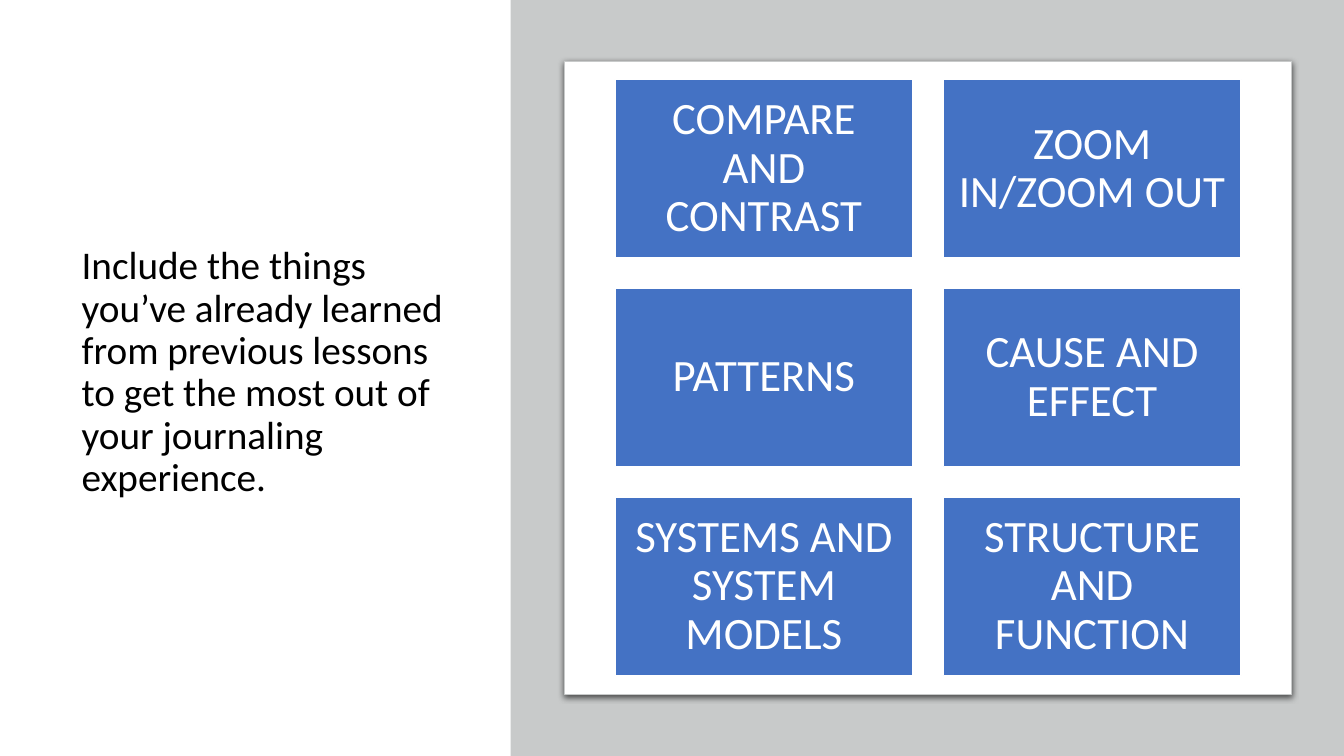
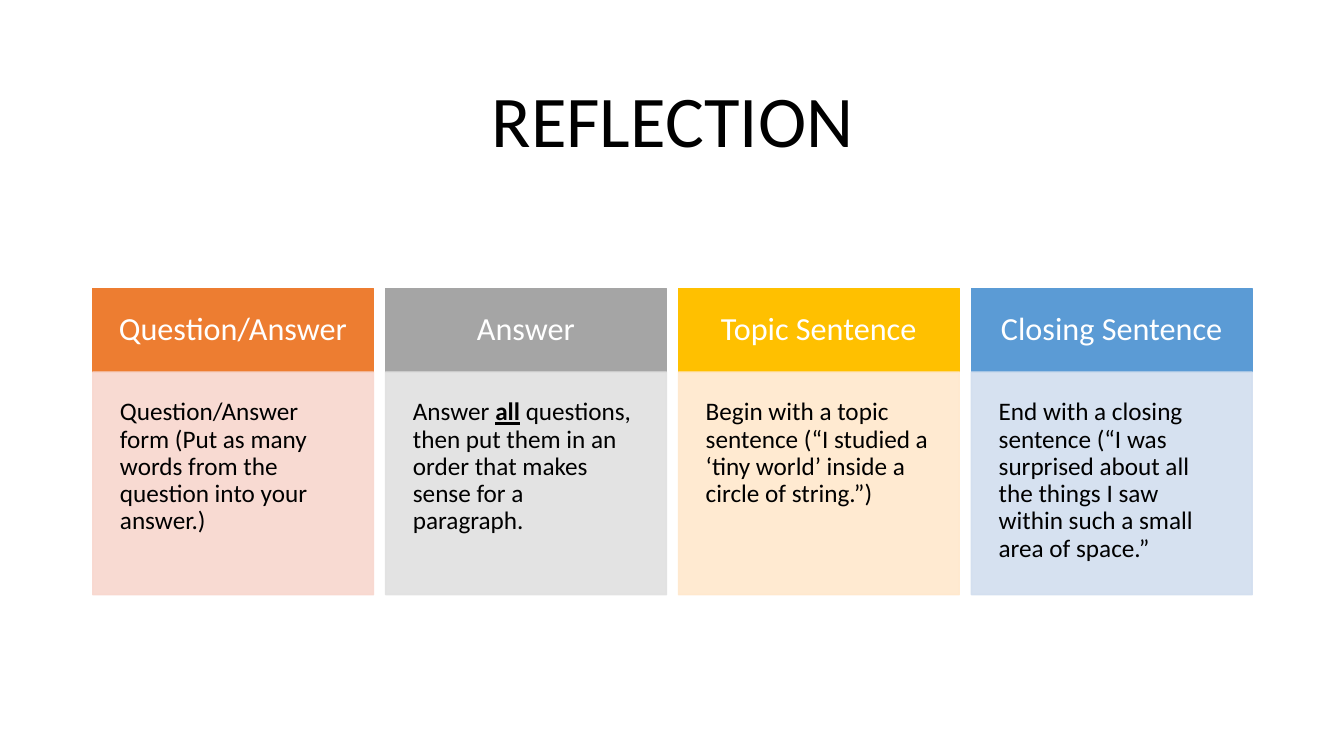
from dataclasses import dataclass
from typing import NamedTuple

from lxml.etree import SubElement
from pptx import Presentation
from pptx.dml.color import RGBColor as RGB
from pptx.enum.shapes import MSO_SHAPE as Kind
from pptx.enum.text import MSO_ANCHOR as Anchor, MSO_AUTO_SIZE as Fit, PP_ALIGN as Align
from pptx.oxml.ns import qn
from pptx.util import Inches, Pt

FONT = "Calibri"
WHITE, BLACK, GREY, BLUE = "FFFFFF", "000000", "C8CACA", "4472C4"
WIDE, HIGH = 13.33, 7.5


class Box(NamedTuple):
    left: float
    top: float
    wide: float
    high: float


@dataclass(frozen=True)
class Grid:
    area: Box
    cols: int
    rows: int
    gap: float

    def cell(self, col: int, row: int) -> Box:
        wide = (self.area.wide - self.gap * (self.cols - 1)) / self.cols
        high = (self.area.high - self.gap * (self.rows - 1)) / self.rows
        return Box(self.area.left + col * (wide + self.gap),
                   self.area.top + row * (high + self.gap), wide, high)


@dataclass(frozen=True)
class Style:
    size: float
    tint: str
    align: Align
    anchor: Anchor
    side: float = 0.1
    edge: float = 0.05


@dataclass(frozen=True)
class Card:
    head: str
    body: str
    dark: str
    pale: str


TILE = Style(32, WHITE, Align.CENTER, Anchor.MIDDLE, 0.13, 0.13)
HEAD = Style(23, WHITE, Align.CENTER, Anchor.MIDDLE, 0.22, 0.22)
BODY = Style(18, BLACK, Align.LEFT, Anchor.TOP, 0.27, 0.27)
LEAD = Style(28, BLACK, Align.LEFT, Anchor.MIDDLE)
TITLE = Style(52, BLACK, Align.CENTER, Anchor.MIDDLE)

TILES = [
    "COMPARE AND CONTRAST", "ZOOM IN/ZOOM OUT",
    "PATTERNS", "CAUSE AND EFFECT",
    "SYSTEMS AND SYSTEM MODELS", "STRUCTURE AND FUNCTION",
]
CARDS = [
    Card("Question/Answer",
         "Question/Answer form (Put as many words from the question into your answer.)",
         "ED7D31", "F8D7CE"),
    Card("Answer",
         "Answer *all* questions, then put them in an order that makes sense for a paragraph.",
         "A5A5A5", "E1E1E1"),
    Card("Topic Sentence",
         "Begin with a topic sentence (“I studied a ‘tiny world’ inside a circle of string.”)",
         "FFC000", "FFE8CC"),
    Card("Closing Sentence",
         "End with a closing sentence (“I was surprised about all the things I saw "
         "within such a small area of space.”",
         "5B9BD5", "D2DEEF"),
]


def paint(part, tint: str) -> None:
    part.solid()
    part.fore_color.rgb = RGB.from_string(tint)


def write(shape, text: str, style: Style) -> None:
    frame = shape.text_frame
    frame.word_wrap = True
    frame.auto_size = Fit.NONE
    frame.vertical_anchor = style.anchor
    frame.margin_left = frame.margin_right = Inches(style.side)
    frame.margin_top = frame.margin_bottom = Inches(style.edge)
    para = frame.paragraphs[0]
    para.alignment = style.align
    para.line_spacing = 0.9
    for spot, piece in enumerate(text.split("*")):
        run = para.add_run()
        run.text = piece
        run.font.name = FONT
        run.font.size = Pt(style.size)
        run.font.bold = run.font.underline = spot % 2 == 1
        paint(run.font.fill, style.tint)


def block(slide, box: Box, fill: str, line: str = "", weight: float = 1):
    shape = slide.shapes.add_shape(Kind.RECTANGLE, *map(Inches, box))
    shape.shadow.inherit = False
    paint(shape.fill, fill)
    if line:
        paint(shape.line.fill, line)
        shape.line.width = Pt(weight)
    else:
        shape.line.fill.background()
    return shape


def fade(shape, share: int) -> None:
    for tint in shape.element.spPr.iter(qn("a:srgbClr")):
        SubElement(tint, qn("a:alpha"), val=str(share * 1000))


def shade(shape) -> None:
    group = shape.element.spPr.find(qn("a:effectLst"))
    cast = SubElement(group, qn("a:outerShdw"), blurRad=str(Pt(4.5)),
                      dist=str(Pt(1.5)), dir="5400000", algn="t", rotWithShape="0")
    tint = SubElement(cast, qn("a:srgbClr"), val=BLACK)
    SubElement(tint, qn("a:alpha"), val="63000")


def start(deck, text: str, box: Box, style: Style):
    slide = deck.slides.add_slide(deck.slide_layouts[5])
    title = slide.shapes.title
    title.left, title.top, title.width, title.height = map(Inches, box)
    write(title, text, style)
    return slide


def lessons(deck) -> None:
    slide = start(deck, "Include the things you’ve already learned from previous "
                  "lessons to get the most out of your journaling experience.",
                  Box(0.71, 0.69, 4.01, 6.02), LEAD)
    split = WIDE * 0.38
    block(slide, Box(split, 0, WIDE - split, HIGH), GREY)
    shade(block(slide, Box(5.6, 0.61, 7.21, 6.28), WHITE, GREY, 0.75))
    grid = Grid(Box(6.1, 0.79, 6.21, 5.91), 2, 3, 0.3)
    for spot, text in enumerate(TILES):
        row, col = divmod(spot, grid.cols)
        write(block(slide, grid.cell(col, row), BLUE, WHITE), text, TILE)


def reflect(deck) -> None:
    slide = start(deck, "REFLECTION", Box(0.92, 0.61, 11.5, 1.24), TITLE)
    heads = Grid(Box(0.92, 2.86, 11.5, 0.83), len(CARDS), 1, 0.12)
    bodies = Grid(Box(0.92, 3.69, 11.5, 2.21), len(CARDS), 1, 0.12)
    for col, card in enumerate(CARDS):
        write(block(slide, heads.cell(col, 0), card.dark, card.dark), card.head, HEAD)
        body = block(slide, bodies.cell(col, 0), card.pale, card.pale)
        fade(body, 90)
        write(body, card.body, BODY)


def main() -> None:
    deck = Presentation()
    deck.slide_width, deck.slide_height = Inches(WIDE), Inches(HIGH)
    lessons(deck)
    reflect(deck)
    deck.save("out.pptx")


if __name__ == "__main__":
    main()
